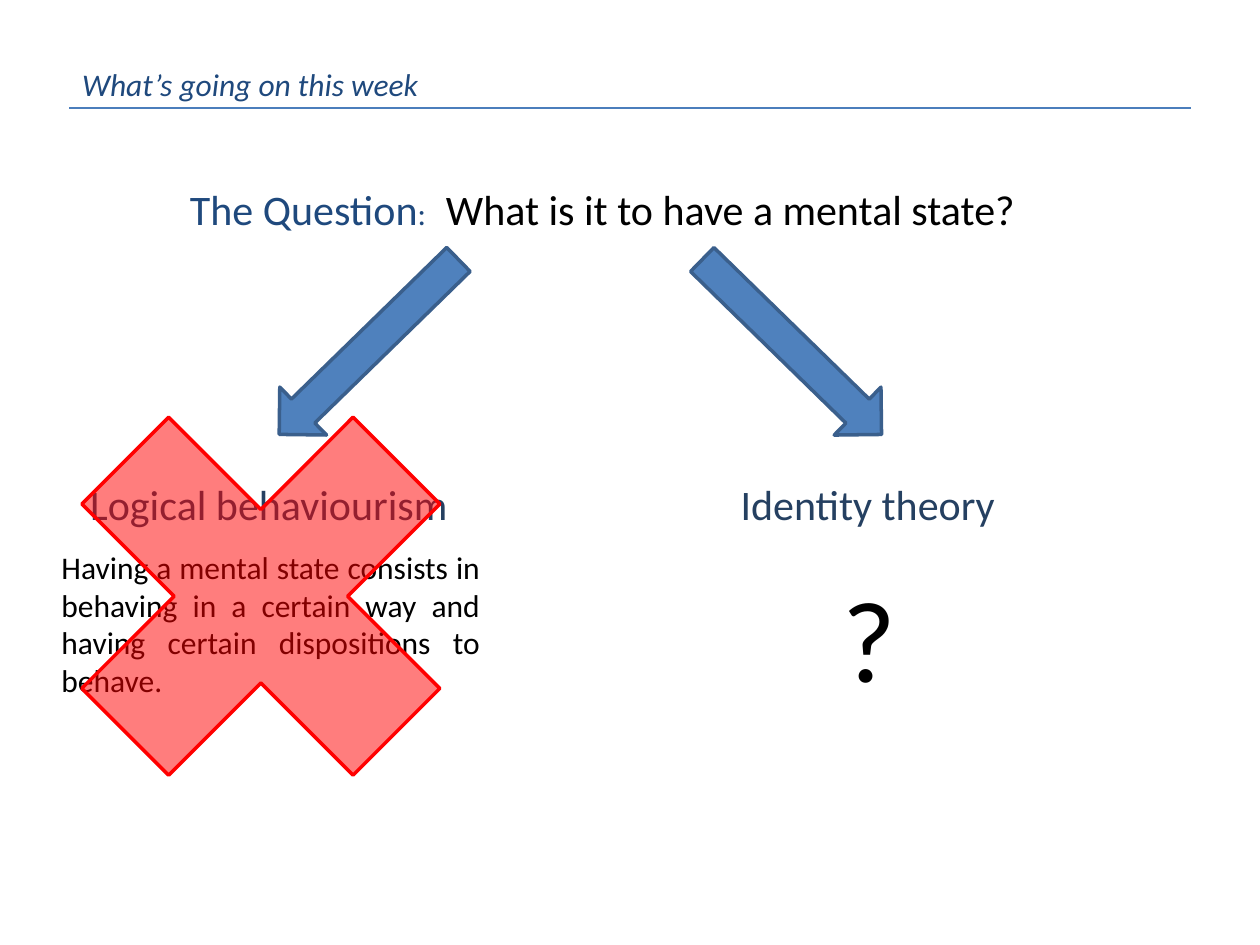
import pptx
import pptx.util
import pptx.dml.color
import pptx.enum.shapes
import pptx.enum.text
import pptx.oxml
import pptx.oxml.ns

Cm = pptx.util.Cm
Pt = pptx.util.Pt
Kind = pptx.enum.shapes.MSO_SHAPE
Align = pptx.enum.text.PP_ALIGN

HUES = {
    "title": "1F497D", "theory": "254061", "text": "000000",
    "rule": "4B7EBC", "arrow": "4F81BD", "edge": "3A5F8C", "cross": "FF0000",
}


def hue(name):
    return pptx.dml.color.RGBColor.from_string(HUES[name])


def place(shape, box):
    shape.left, shape.top, shape.width, shape.height = [Cm(n) for n in box]


def write(frame, text, size=24, color="text", italic=False,
          align=Align.LEFT, wrap=False):
    frame.word_wrap = wrap
    frame.auto_size = pptx.enum.text.MSO_AUTO_SIZE.NONE
    frame.vertical_anchor = pptx.enum.text.MSO_ANCHOR.TOP
    para = frame.paragraphs[0]
    para.alignment = align
    run = para.add_run()
    run.text = text
    run.font.name = "Calibri"
    run.font.size = Pt(size)
    run.font.italic = italic
    run.font.color.rgb = hue(color)


def label(slide, box, text, **style):
    shape = slide.shapes.add_textbox(*[Cm(n) for n in box])
    write(shape.text_frame, text, **style)
    return shape


def solid(slide, kind, box, fill, edge, turn=0):
    shape = slide.shapes.add_shape(kind, *[Cm(n) for n in box])
    shape.shadow.inherit = False
    shape.rotation = turn
    shape.fill.solid()
    shape.fill.fore_color.rgb = hue(fill)
    shape.line.color.rgb = hue(edge)
    shape.line.width = Pt(2)
    return shape


def header(slide, x, y, w):
    title = slide.shapes.title
    place(title, (x, y, 7.37, 1.02))
    write(title.text_frame, "What’s going on this week", size=18,
          color="title", italic=True)
    base = Cm(y + 0.99)
    rule = slide.shapes.add_connector(
        pptx.enum.shapes.MSO_CONNECTOR.STRAIGHT, Cm(x), base, Cm(x + w), base)
    rule.line.color.rgb = hue("rule")
    rule.line.width = Pt(0.75)
    pptx.oxml.ns.qn("a:effectLst")
    rule._element.spPr.append(pptx.oxml.parse_xml(
        "<a:effectLst %s/>" % pptx.oxml.ns.nsdecls("a")))


def question(slide, x, y):
    lead = label(slide, (x, y, 5.33, 1.27), "The Question", color="title")
    write(lead.text_frame, ":", size=18, color="title")
    label(slide, (x + 5.16, y, 12.09, 1.27),
          "What is it to have a mental state?")


def refuted(slide, x, y):
    label(slide, (x + 0.58, y, 7.8, 1.27), "Logical behaviourism",
          color="theory")
    label(slide, (x, y + 1.39, 8.94, 3.33),
          "Having a mental state consists in behaving in a certain way "
          "and having certain dispositions to behave.",
          size=18, align=Align.JUSTIFY, wrap=True)


def rival(slide, x, y):
    label(slide, (x, y, 5.69, 1.27), "Identity theory", color="theory")
    label(slide, (x + 2.06, y + 1.77, 1.6, 3.07), "?", size=66)


def arrows(slide, x, y, gap):
    for left, turn in ((x, 45.7), (x + gap, 314.3)):
        solid(slide, Kind.DOWN_ARROW, (left, y, 1.35, 5.05),
              "arrow", "edge", turn)


def cross(slide, x, y, side):
    mark = solid(slide, Kind.MATH_MULTIPLY, (x, y, side, side),
                 "cross", "cross")
    tint = mark._element.spPr.find(".//" + pptx.oxml.ns.qn("a:srgbClr"))
    tint.append(pptx.oxml.parse_xml(
        '<a:alpha %s val="51000"/>' % pptx.oxml.ns.nsdecls("a")))


def main():
    deck = pptx.Presentation()
    deck.slide_width, deck.slide_height = Cm(25.4), Cm(19.05)
    slide = deck.slides.add_slide(deck.slide_layouts[5])
    header(slide, 1.4, 1.19, 22.6)
    question(slide, 3.58, 3.58)
    refuted(slide, 0.99, 9.53)
    rival(slide, 14.68, 9.53)
    arrows(slide, 6.76, 4.47, 8.53)
    cross(slide, 0, 6.76, 10.52)
    deck.save("out.pptx")


if __name__ == "__main__":
    main()
